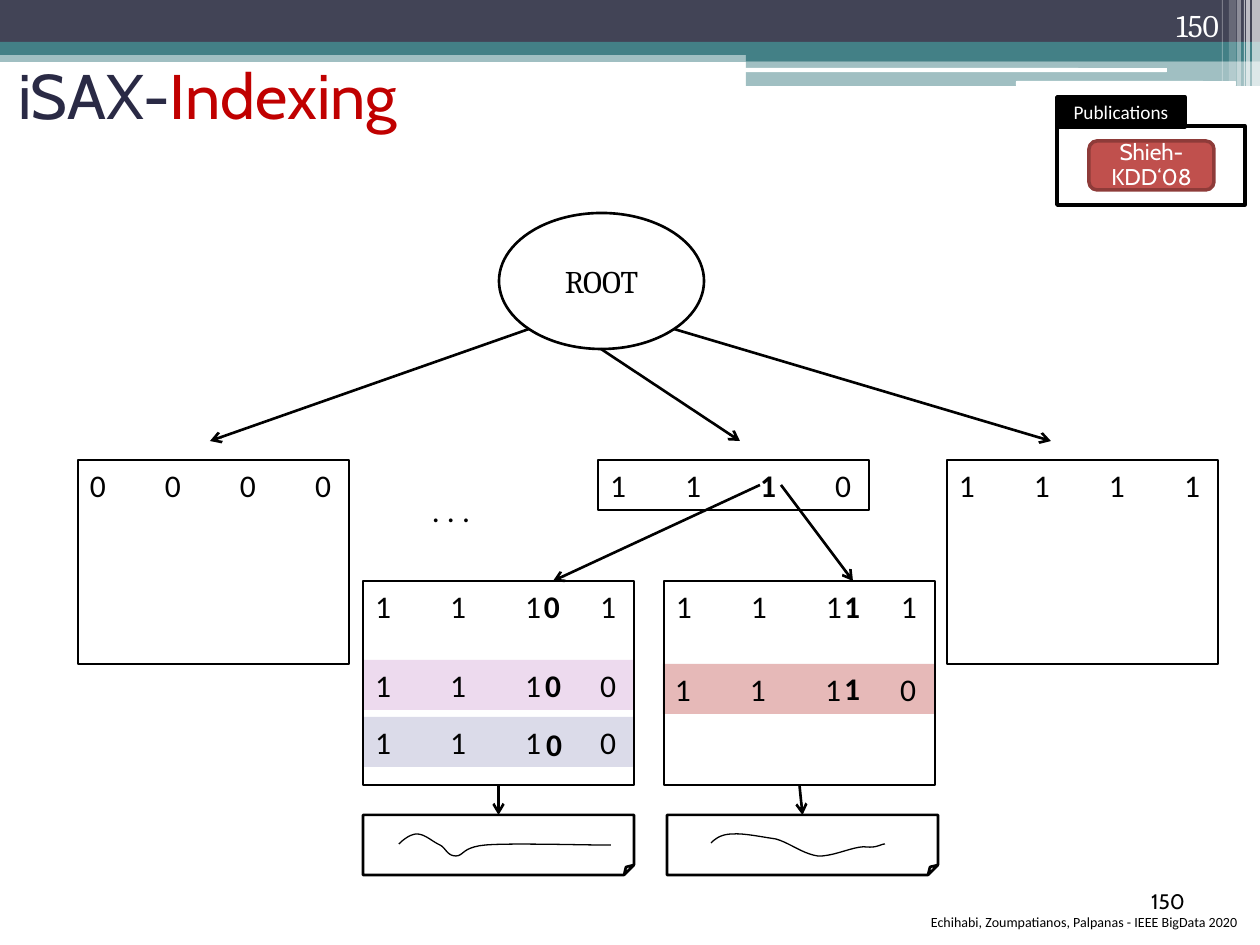
from lxml import etree
from pptx import Presentation
from pptx.dml.color import RGBColor
from pptx.enum.shapes import MSO_CONNECTOR, MSO_SHAPE
from pptx.enum.text import MSO_ANCHOR, PP_ALIGN
from pptx.oxml.ns import qn
from pptx.util import Pt

RECT, ROUND, OVAL = MSO_SHAPE.RECTANGLE, MSO_SHAPE.ROUNDED_RECTANGLE, MSO_SHAPE.OVAL
FOLDED = MSO_SHAPE.FOLDED_CORNER
LEFT, CENTER, RIGHT = PP_ALIGN.LEFT, PP_ALIGN.CENTER, PP_ALIGN.RIGHT
TOP, MIDDLE, BOTTOM = MSO_ANCHOR.TOP, MSO_ANCHOR.MIDDLE, MSO_ANCHOR.BOTTOM
PX = 914400 / 126
COLORS = {
    "black": "000000", "white": "FFFFFF", "slate": "424456", "teal": "438086",
    "navy": "2A2A45", "red": "C00000", "badge": "C0504D", "badge_edge": "8E3B39",
    "pink": "EDDAEE", "rose": "E6B9B8", "lilac": "DBDBE9",
}

# Header bands: shape, box, colour, opacity in percent
BANDS = [
    (RECT, (0, 50, 1260, 12), "teal", 50),
    (RECT, (0, 0, 1260, 43), "slate", 100),
    (RECT, (0, 42, 1260, 13), "teal", 100),
    (RECT, (746, 49, 514, 12), "teal", 100),
    (RECT, (746, 61, 514, 25), "teal", 50),
    (ROUND, (745, 68, 422, 4), "white", 100),
    (ROUND, (1016, 81, 220, 5), "white", 100),
]
# Header stripes: left, width, height, opacity in percent
STRIPES = [(1252, 8, 86, 65), (1246, 4, 86, 65), (1244, 1, 86, 60),
           (1237, 4, 86, 40), (1229, 7, 81, 20), (1222, 1, 81, 30)]

ROW_W, ROW_H, NODE_H, TAB = 271, 50, 204, 75
BOLD = {"bold": True}
NODES = [  # left, top, height, runs
    (78, 460, NODE_H, [("0\t0\t0\t0", {})]),
    (598, 460, ROW_H, [("1\t1\t", {}), ("1", BOLD), ("\t0", {})]),
    (947, 460, NODE_H, [("1\t1\t1\t1", {})]),
]
SERIES_ROWS = [(363, 660, "pink"), (663, 664, "rose"), (363, 717, "lilac")]
ROW_BITS = [(533, 660, "0"), (832, 663, "1"), (534, 719, "0")]
# Split leaves: box left, left and text of the added bit, arrow start, file left
LEAVES = [(363, 532, "0", (760, 485), 363), (664, 832, "1", (781, 485), 667)]
LEAF_TOP, FILE_TOP = 581, 815
ROOT_ARROWS = [((529, 329), (210, 441)), ((601, 349), (740, 441)),
               ((674, 329), (1051, 441))]
# Series curves: start point, then Bezier segments
CURVES = [
    ((399, 844), [((404, 839), (411, 834), (417, 834)),
                  ((425, 834), (433, 842), (440, 845)),
                  ((446, 848), (447, 856), (456, 856)),
                  ((464, 856), (462, 847), (486, 845)),
                  ((510, 843), (577, 845), (599, 845)),
                  ((619, 845), (597, 845), (611, 845))]),
    ((711, 843), [((716, 838), (722, 834), (733, 834)),
                  ((743, 833), (762, 837), (776, 839)),
                  ((790, 843), (803, 854), (818, 856)),
                  ((833, 857), (856, 845), (867, 847)),
                  ((877, 848), (881, 844), (885, 844))]),
]


def emu(*values):
    return [round(v * PX) for v in values]


def rgb(name):
    return RGBColor.from_string(COLORS[name])


def write(sp, *paragraphs, size=18, font="Calibri", color="black", align=LEFT,
          anchor=TOP, wrap=True, inset=(12, 6, 12, 6), spacing=None, tabs=0):
    """Fill sp; each paragraph is a string or a list of (text, overrides) runs."""
    tf = sp.text_frame
    tf.word_wrap, tf.vertical_anchor = wrap, anchor
    tf.margin_left, tf.margin_top, tf.margin_right, tf.margin_bottom = emu(*inset)
    for i, runs in enumerate(paragraphs):
        p = tf.paragraphs[0] if i == 0 else tf.add_paragraph()
        p.alignment = align
        if spacing:
            p.line_spacing = spacing
        if tabs:
            stops = etree.SubElement(p._p.get_or_add_pPr(), qn("a:tabLst"))
            for n in range(1, tabs + 1):
                etree.SubElement(stops, qn("a:tab"), pos=str(emu(n * TAB)[0]), algn="l")
        for text, changes in [(runs, {})] if isinstance(runs, str) else runs:
            r = p.add_run()
            r.text = text
            r.font.size, r.font.name = Pt(size), font
            r.font.bold = changes.get("bold", False)
            r.font.color.rgb = rgb(changes.get("color", color))


def add_box(kind, box, fill=None, line=None, width=0.75, opacity=100):
    sp = shapes.add_shape(kind, *emu(*box))
    sp.shadow.inherit = False
    if fill:
        sp.fill.solid()
        sp.fill.fore_color.rgb = rgb(fill)
        if opacity < 100:
            clr = sp.fill._xPr.find(".//" + qn("a:srgbClr"))
            etree.SubElement(clr, qn("a:alpha"), val=str(opacity * 1000))
    else:
        sp.fill.background()
    if line:
        sp.line.color.rgb, sp.line.width = rgb(line), Pt(width)
    else:
        sp.line.fill.background()
    return sp


def add_text(box, *paragraphs, **fmt):
    sp = shapes.add_textbox(*emu(*box))
    write(sp, *paragraphs, **fmt)
    return sp


def add_row(box, runs, **fmt):
    write(add_box(RECT, box, **fmt), runs, tabs=3, inset=(12, 6, 0, 6))


def add_bit(left, top, bit):
    return add_text((left, top, 42, ROW_H), [(bit, BOLD)], wrap=False)


def add_arrow(start, end):
    c = shapes.add_connector(MSO_CONNECTOR.STRAIGHT, *emu(*start, *end))
    c.line.color.rgb, c.line.width = rgb("black"), Pt(1.5)
    etree.SubElement(c.line._get_or_add_ln(), qn("a:tailEnd"), type="arrow")
    etree.SubElement(c._element.spPr, qn("a:effectLst"))
    return c


def add_curve(start, segments, steps=10):
    points, p0 = [], start
    for p1, p2, p3 in segments:
        for t in (n / steps for n in range(1, steps + 1)):
            u = 1 - t
            points.append(emu(*(u**3 * a + 3 * u * u * t * b + 3 * u * t * t * c + t**3 * d
                                for a, b, c, d in zip(p0, p1, p2, p3))))
        p0 = p3
    builder = shapes.build_freeform(*emu(*start), scale=1.0)
    builder.add_line_segments(points, close=False)
    sp = builder.convert_to_shape()
    sp.shadow.inherit = False
    sp.fill.background()
    sp.line.color.rgb, sp.line.width = rgb("black"), Pt(0.75)


prs = Presentation()
prs.slide_width, prs.slide_height = emu(1260, 945)
slide = prs.slides.add_slide(prs.slide_layouts[5])
shapes = slide.shapes

title = shapes.title
title.left, title.top, title.width, title.height = emu(6, 56, 1134, 150)
write(title, [("iSAX-", {}), ("Indexing", {"color": "red"})], size=36, font="Cabin",
      color="navy", inset=(12, 0, 12, 0))

for kind, box, color, opacity in BANDS:
    add_box(kind, box, color, opacity=opacity)
for left, width, height, opacity in STRIPES:
    add_box(RECT, (left, 0, width, height), "white", opacity=opacity)
add_text((1126, 0, 105, 50), "150", font="Cambria", color="white", align=RIGHT, anchor=BOTTOM)

root = add_box(OVAL, (499, 213, 205, 136), "white", "black", 1.5)
write(root, "ROOT", font="Cambria", align=CENTER, anchor=MIDDLE)
for start, end in ROOT_ARROWS:
    add_arrow(start, end)
add_text((420, 485, 64, ROW_H), ". . .", wrap=False)

for left, top, height, runs in NODES:
    add_row((left, top, ROW_W, height), runs, line="black")
for left, top, fill in SERIES_ROWS:
    add_row((left, top, ROW_W, ROW_H), "1\t1\t1\t0", fill=fill)
for bit in ROW_BITS:
    add_bit(*bit)

for left, bit_left, bit, start, file_left in LEAVES:
    leaf_box = (left, LEAF_TOP, ROW_W, NODE_H)
    add_row(leaf_box, "1\t1\t1\t1", line="black")
    leaf = shapes[-1]
    added_bit = add_bit(bit_left, LEAF_TOP, bit)
    add_arrow(start, (bit_left + 21, LEAF_TOP)).end_connect(added_bit, 0)
    file = add_box(FOLDED, (file_left, FILE_TOP, ROW_W, 60), "white", "black", 1.5)
    link = add_arrow((left, LEAF_TOP + NODE_H), (file_left, FILE_TOP))
    link.begin_connect(leaf, 2)
    link.end_connect(file, 0)
for curve in CURVES:
    add_curve(*curve)

add_text((903, 876, 294, 50), "150", size=12, font="Cabin", align=RIGHT, anchor=MIDDLE)
add_text((798, 908, 452, 37), "Echihabi, Zoumpatianos, Palpanas - IEEE BigData 2020",
         size=8, align=RIGHT)

add_box(RECT, (1057, 126, 188, 79), "white", "black", 2)
label = add_box(RECT, (1057, 97, 128, 30), "black", "black", 2)
write(label, "Publications", size=11, color="white", align=CENTER, anchor=MIDDLE,
      inset=(0, 0, 0, 0))
badge = add_box(ROUND, (1089, 141, 125, 49), "badge", "badge_edge", 2)
write(badge, "Shieh-", "KDD‘08", size=13, font="Cabin", color="white", align=CENTER,
      anchor=MIDDLE, spacing=0.9, inset=(0, 0, 0, 0))

prs.save("out.pptx")
